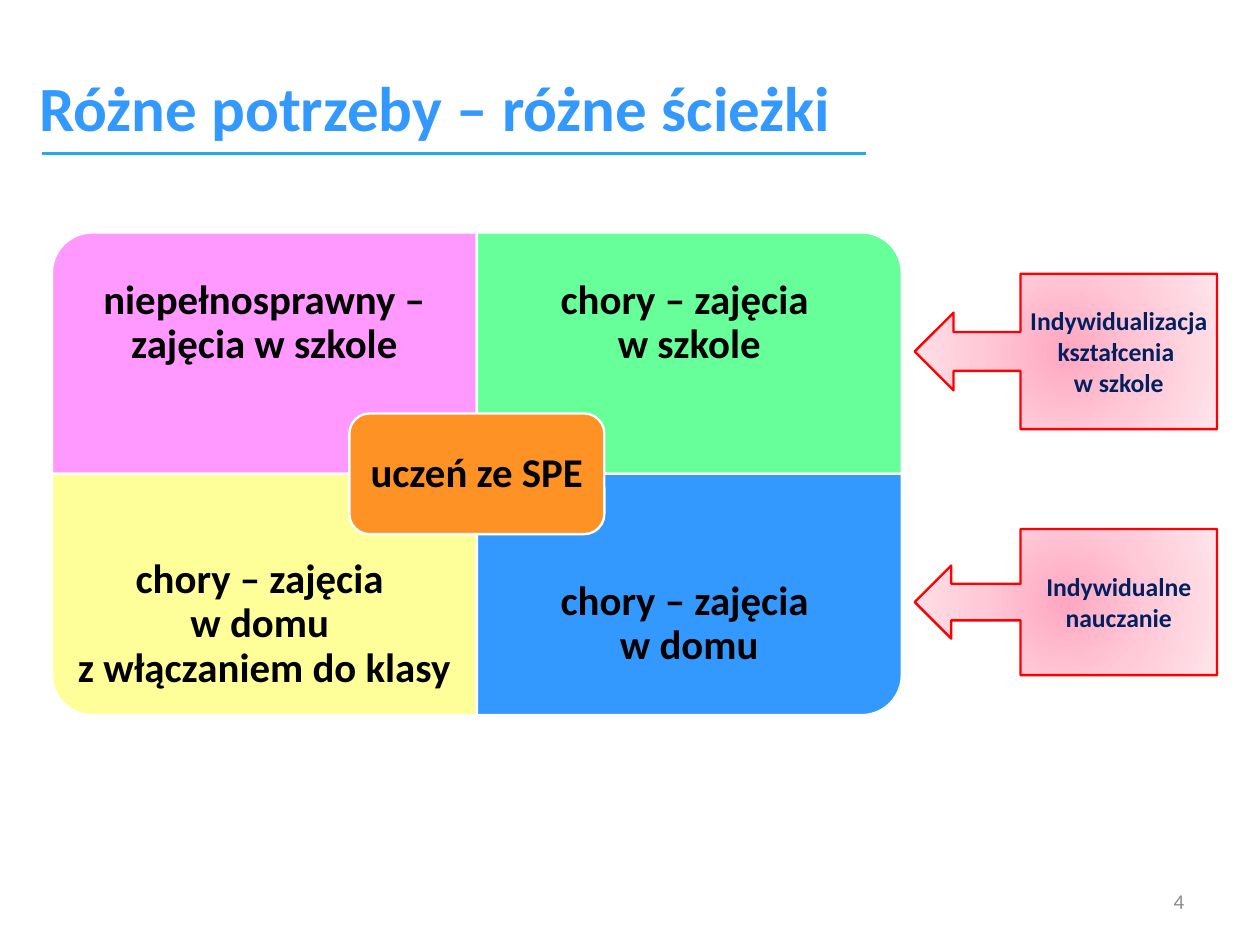
import pptx
import pptx.dml.color
import pptx.enum.shapes
import pptx.enum.text
import pptx.oxml
import pptx.oxml.ns
import pptx.util
from pptx.util import Cm

SHAPES = pptx.enum.shapes.MSO_SHAPE
ALIGN = pptx.enum.text.PP_ALIGN
ANCHOR = pptx.enum.text.MSO_ANCHOR

COLOURS = {
    "title": "3399FF", "rule": "25AAE1", "number": "8C8C8C",
    "text": "000000", "callout_text": "002060", "callout_line": "FF0000",
    "border": "FFFFFF", "pink": "FF99FF", "green": "66FF99",
    "yellow": "FFFF99", "blue": "3399FF", "orange": "FF9225",
    "glow_inner": "FFA7C1", "glow_middle": "FFC9D8", "glow_outer": "FFE5EB",
}


def colour(name):
    return pptx.dml.color.RGBColor.from_string(COLOURS[name])


def write_text(shape, text, size=35, color="text", bold=True, align=ALIGN.CENTER,
               anchor=ANCHOR.MIDDLE, spacing=None, margins=(0.25, 0.13)):
    frame = shape.text_frame
    frame.word_wrap = True
    frame.auto_size = pptx.enum.text.MSO_AUTO_SIZE.NONE
    frame.vertical_anchor = anchor
    frame.margin_left = frame.margin_right = Cm(margins[0])
    frame.margin_top = frame.margin_bottom = Cm(margins[1])
    paragraph = frame.paragraphs[0]
    paragraph.text = text
    paragraph.alignment = align
    if spacing:
        paragraph.line_spacing = spacing
    for run in paragraph.runs:
        run.font.name = "Calibri"
        run.font.size = pptx.util.Pt(size)
        run.font.bold = bold
        run.font.color.rgb = colour(color)


def add_text(slide, box, text, **style):
    shape = slide.shapes.add_textbox(*map(Cm, box))
    write_text(shape, text, **style)


def add_shape(slide, kind, box, line, fill=None):
    shape = slide.shapes.add_shape(kind, *map(Cm, box))
    shape.shadow.inherit = False
    if fill:
        shape.fill.solid()
        shape.fill.fore_color.rgb = colour(fill)
    shape.line.color.rgb = colour(line)
    shape.line.width = pptx.util.Pt(2)
    return shape


def add_heading(slide, box, text):
    left, top, width, height = box
    title = slide.shapes.title
    title.left, title.top, title.width, title.height = map(Cm, box)
    write_text(title, text, size=54, color="title", align=ALIGN.LEFT,
               anchor=ANCHOR.TOP, spacing=1.0)
    # Rule under the title
    rule_left, rule_top = left + 0.33, top + height + 0.15
    rule = slide.shapes.add_connector(
        pptx.enum.shapes.MSO_CONNECTOR.STRAIGHT,
        Cm(rule_left), Cm(rule_top), Cm(rule_left + 24.92), Cm(rule_top))
    rule.line.color.rgb = colour("rule")
    rule.line.width = pptx.util.Pt(2.25)
    rule.element.spPr.append(pptx.oxml.parse_xml(
        f'<a:effectLst {pptx.oxml.ns.nsdecls("a")}/>'))


def add_matrix(slide, box, quadrants, centre_text):
    left, top, width, height = box
    cell_width, cell_height = width / 2, height / 2
    text_height = cell_height * 0.75
    for index, (text, fill, rotation) in enumerate(quadrants):
        row, column = divmod(index, 2)
        x, y = left + column * cell_width, top + row * cell_height
        # A quarter turn swaps width and height around the same centre
        shape_width, shape_height = cell_width, cell_height
        if rotation % 180:
            shape_width, shape_height = cell_height, cell_width
        quadrant = add_shape(
            slide, SHAPES.ROUND_1_RECTANGLE,
            (x + (cell_width - shape_width) / 2, y + (cell_height - shape_height) / 2,
             shape_width, shape_height), "border", fill)
        quadrant.rotation = rotation
        # Text keeps to the outer three quarters of the cell
        text_top = y + row * (cell_height - text_height)
        add_text(slide, (x, text_top, cell_width, text_height), text,
                 spacing=0.9, margins=(0.69, 0.69))
    # Centre label
    centre_width, centre_height = width * 0.3, height * 0.25
    centre = add_shape(
        slide, SHAPES.ROUNDED_RECTANGLE,
        (left + (width - centre_width) / 2, top + (height - centre_height) / 2,
         centre_width, centre_height), "border", "orange")
    write_text(centre, centre_text, spacing=0.9, margins=(0.38, 0.38))


def add_callout(slide, box, text):
    callout = add_shape(slide, SHAPES.LEFT_ARROW_CALLOUT, box, "callout_line")
    stops = "".join(
        f'<a:gs pos="{position * 1000}"><a:srgbClr val="{COLOURS[name]}"/></a:gs>'
        for position, name in ((0, "glow_inner"), (50, "glow_middle"), (100, "glow_outer")))
    gradient = pptx.oxml.parse_xml(
        f'<a:gradFill {pptx.oxml.ns.nsdecls("a")} rotWithShape="1"><a:gsLst>{stops}</a:gsLst>'
        '<a:path path="circle"><a:fillToRect l="50000" t="50000" r="50000" b="50000"/>'
        '</a:path></a:gradFill>')
    callout.element.spPr.find(pptx.oxml.ns.qn("a:prstGeom")).addnext(gradient)
    write_text(callout, text, size=22, color="callout_text")


def main():
    presentation = pptx.Presentation()
    presentation.slide_width, presentation.slide_height = Cm(38.1), Cm(28.58)
    slide = presentation.slides.add_slide(presentation.slide_layouts[5])

    add_heading(slide, (0.94, 1.93, 33.05, 2.57), "Różne potrzeby – różne ścieżki")
    add_matrix(slide, (1.57, 7.03, 25.7, 14.6), [
        ("niepełnosprawny – zajęcia w szkole", "pink", 270),
        ("chory – zajęcia \nw szkole", "green", 0),
        ("chory – zajęcia \nw domu \nz włączaniem do klasy ", "yellow", 180),
        ("chory – zajęcia \nw domu", "blue", 90),
    ], "uczeń ze SPE")
    add_callout(slide, (27.66, 8.28, 9.14, 4.7),
                "Indywidualizacja kształcenia \nw szkole")
    add_callout(slide, (27.66, 16, 9.14, 4.42), "Indywidualne nauczanie")
    # Slide number
    add_text(slide, (27.3, 26.49, 8.89, 1.52), "4", size=18, color="number",
             bold=False, align=ALIGN.RIGHT, margins=(0.38, 0.18))

    presentation.save("out.pptx")


if __name__ == "__main__":
    main()
